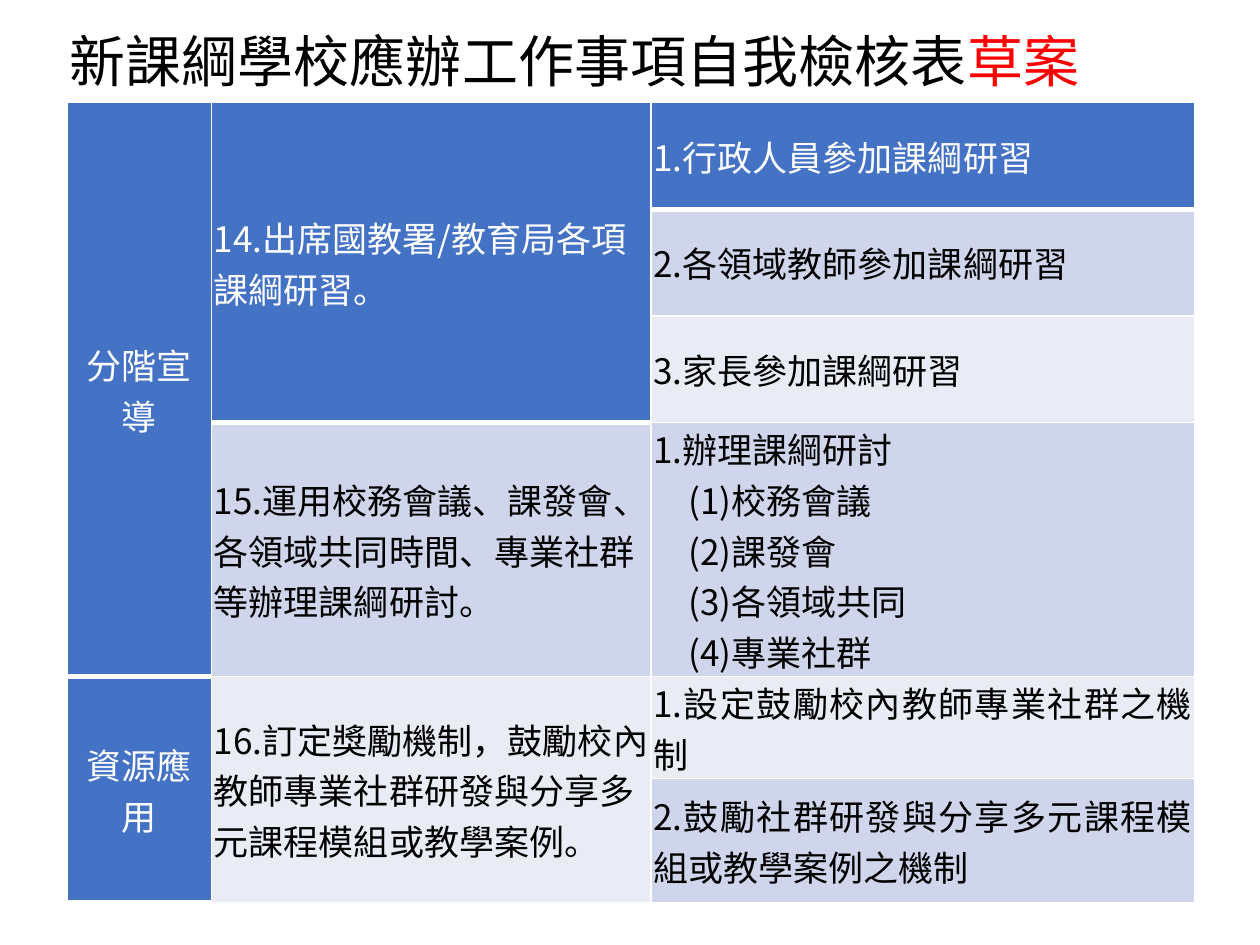
from lxml.etree import SubElement
from pptx import Presentation
from pptx.dml.color import RGBColor as RGB
from pptx.enum.text import MSO_ANCHOR as ANCHOR, PP_ALIGN as ALIGN
from pptx.oxml import parse_xml
from pptx.oxml.ns import nsdecls, qn
from pptx.util import Pt

FONT = "Noto Sans CJK TC"
COLORS = {"white": "FFFFFF", "black": "000000", "red": "FF0000",
          "blue": "4472C4", "band": "CFD5EA", "pale": "E9EBF5"}
TITLE = [("新課綱學校應辦工作事項自我檢核表", "black"), ("草案", "red")]
TITLE_BOX = (13.7, 11.5, 629.3, 46)
TABLE_AT = (38.2, 58.6)
COLS = [82.6, 251.2, 310.6]
ROWS = [61, 61, 61, 140.6, 47.8, 71]
C, L, J = ALIGN.CENTER, ALIGN.LEFT, ALIGN.JUSTIFY
CELLS = [
    (0, 0, 4, "blue", C, ["分階宣導"]),
    (0, 1, 3, "blue", L, ["14.出席國教署/教育局各項課綱研習。"]),
    (0, 2, 1, "blue", J, ["1.行政人員參加課綱研習"]),
    (1, 2, 1, "band", J, ["2.各領域教師參加課綱研習"]),
    (2, 2, 1, "pale", J, ["3.家長參加課綱研習"]),
    (3, 1, 1, "band", L, ["15.運用校務會議、課發會、各領域共同時間、專業社群等辦理課綱研討。"]),
    (3, 2, 1, "band", L, ["1.辦理課綱研討", "(1)校務會議", "(2)課發會", "(3)各領域共同", "(4)專業社群"]),
    (4, 0, 2, "blue", C, ["資源應用"]),
    (4, 1, 2, "pale", L, ["16.訂定獎勵機制，鼓勵校內教師專業社群研發與分享多元課程模組或教學案例。"]),
    (4, 2, 1, "pale", J, ["1.設定鼓勵校內教師專業社群之機制"]),
    (5, 2, 1, "band", J, ["2.鼓勵社群研發與分享多元課程模組或教學案例之機制"]),
]
CELL_FORMAT = {"vertical_anchor": ANCHOR.MIDDLE, "margin_left": Pt(1.4),
               "margin_right": Pt(1.4), "margin_top": 0, "margin_bottom": 0}


def add_run(p, text, size, color):
    r = p.add_run()
    r.text = text
    for name, value in {"size": Pt(size), "name": FONT, "bold": False}.items():
        setattr(r.font, name, value)
    r.font.color.rgb = RGB.from_string(COLORS[color])
    SubElement(r.font._element, qn("a:ea"), typeface=FONT)


def add_borders(cell, bottom):
    widths = {"L": 1, "R": 1, "T": 1, "B": bottom}
    for i, (side, width) in enumerate(widths.items()):
        cell._tc.get_or_add_tcPr().insert(i, parse_xml(
            f'<a:ln{side} {nsdecls("a")} w="{Pt(width)}"><a:solidFill>'
            f'<a:srgbClr val="{COLORS["white"]}"/></a:solidFill></a:ln{side}>'))


def fill_cell(cell, fill, align, lines):
    for name, value in CELL_FORMAT.items():
        setattr(cell, name, value)
    cell.fill.solid()
    cell.fill.fore_color.rgb = RGB.from_string(COLORS[fill])
    add_borders(cell, 3 if fill == "blue" else 1)
    tf = cell.text_frame
    for i, line in enumerate(lines):
        p = tf.add_paragraph() if i else tf.paragraphs[0]
        p.alignment = align
        if i:
            p._p.get_or_add_pPr().set("marL", str(Pt(20)))
        add_run(p, line, 20, "white" if fill == "blue" else "black")


def main():
    prs = Presentation()
    prs.slide_width, prs.slide_height = Pt(720), Pt(540)
    s = prs.slides.add_slide(prs.slide_layouts[6])

    size = (sum(COLS), sum(ROWS))
    table = s.shapes.add_table(len(ROWS), len(COLS), *map(Pt, TABLE_AT + size)).table
    table.first_row = table.horz_banding = False
    for col, width in zip(table.columns, COLS):
        col.width = Pt(width)
    for row, height in zip(table.rows, ROWS):
        row.height = Pt(height)
    for row, col, span, *content in CELLS:
        cell = table.cell(row, col)
        if span > 1:
            cell.merge(table.cell(row + span - 1, col))
        fill_cell(cell, *content)

    tf = s.shapes.add_textbox(*map(Pt, TITLE_BOX)).text_frame
    tf.word_wrap = True
    p = tf.paragraphs[0]
    p.alignment = C
    for text, color in TITLE:
        add_run(p, text, 32, color)

    prs.save("out.pptx")


if __name__ == "__main__":
    main()
